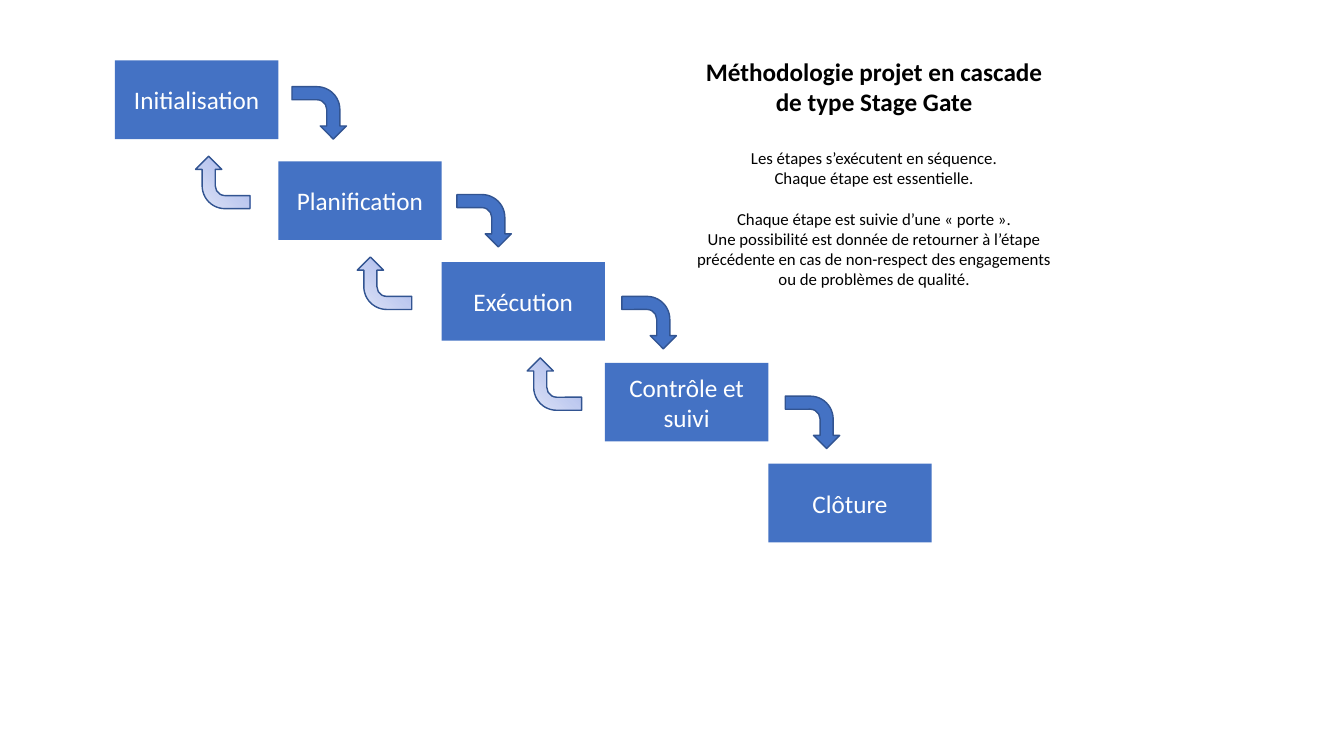
from copy import deepcopy
from dataclasses import dataclass

from pptx import Presentation
from pptx.dml.color import RGBColor
from pptx.enum.shapes import MSO_SHAPE
from pptx.enum.text import MSO_ANCHOR, MSO_AUTO_SIZE, PP_ALIGN
from pptx.util import Inches, Pt


@dataclass(frozen=True)
class Theme:
    font: str = "Calibri"
    heading_size: int = 18
    body_size: int = 12
    blue: str = "4472C4"
    outline: str = "325491"
    white: str = "FFFFFF"
    black: str = "000000"
    fade: tuple = ("96ABEA", "C0CBF0", "E0E5F7")


@dataclass(frozen=True)
class Stage:
    """Arrow offsets are shares of a grid cell, from the stage's corner."""
    label: str
    forward: tuple = None
    back: tuple = None


THEME = Theme()
COLUMN, ROW = 1.62, 1.0
STAGE_HEIGHT = 0.78
ARROW_WIDTH, ARROW_HEIGHT = 0.52, 0.54

STAGES = [
    Stage("Initialisation", (1.09, 0.25), (0.5, 0.94)),
    Stage("Planification", (1.1, 0.32), (0.49, 0.94)),
    Stage("Exécution", (1.11, 0.33), (0.53, 0.94)),
    Stage("Contrôle et suivi", (1.11, 0.32)),
    Stage("Clôture"),
]

TITLE = "Méthodologie projet en cascade de type Stage Gate"
# Each body line with the space above it, in points
BODY = [
    ("Les étapes s’exécutent en séquence.", 22),
    ("Chaque étape est essentielle.", 0),
    ("Chaque étape est suivie d’une « porte ».", 14.65),
    ("Une possibilité est donnée de retourner à l’étape précédente en cas de "
     "non-respect des engagements ou de problèmes de qualité.", 0),
]


def color(code):
    return RGBColor.from_string(code)


def style(para, size, code, bold=False):
    para.alignment = PP_ALIGN.CENTER
    para.font.name = THEME.font
    para.font.size = Pt(size)
    para.font.bold = bold
    para.font.color.rgb = color(code)


def add_shape(page, kind, left, top, width, height):
    shape = page.shapes.add_shape(
        kind, Inches(left), Inches(top), Inches(width), Inches(height))
    shape.shadow.inherit = False
    shape.fill.solid()
    shape.fill.fore_color.rgb = color(THEME.blue)
    return shape


def add_stage(page, label, left, top):
    box = add_shape(page, MSO_SHAPE.RECTANGLE, left, top, COLUMN, STAGE_HEIGHT)
    box.line.fill.background()
    frame = box.text_frame
    frame.word_wrap = True
    frame.vertical_anchor = MSO_ANCHOR.MIDDLE
    frame.text = label
    style(frame.paragraphs[0], THEME.heading_size, THEME.white)


def add_arrow(page, left, top, offset, rotation):
    across, down = offset
    arrow = add_shape(page, MSO_SHAPE.BENT_ARROW, left + across * COLUMN,
                      top + down * ROW, ARROW_WIDTH, ARROW_HEIGHT)
    arrow.rotation = rotation
    arrow.line.color.rgb = color(THEME.outline)
    arrow.line.width = Pt(1)
    return arrow


def fade_fill(fill):
    """Fill with the theme's three-colour diagonal gradient."""
    fill.gradient()
    fill.gradient_angle = 135
    first = fill.gradient_stops[0]._gs
    first.addnext(deepcopy(first))
    for index, (stop, code) in enumerate(zip(fill.gradient_stops, THEME.fade)):
        stop.position = index / 2
        stop.color.rgb = color(code)


def add_cascade(page, left, top):
    for index, stage in enumerate(STAGES):
        corner = left + index * COLUMN, top + index * ROW
        add_stage(page, stage.label, *corner)
        if stage.forward:
            add_arrow(page, *corner, stage.forward, 90)
        if stage.back:
            fade_fill(add_arrow(page, *corner, stage.back, 270).fill)


def add_description(page, left, top, width, height):
    box = page.shapes.add_textbox(
        Inches(left), Inches(top), Inches(width), Inches(height))
    frame = box.text_frame
    frame.word_wrap = True
    frame.auto_size = MSO_AUTO_SIZE.SHAPE_TO_FIT_TEXT
    frame.text = TITLE
    style(frame.paragraphs[0], THEME.heading_size, THEME.black, bold=True)
    for line, space in BODY:
        para = frame.add_paragraph()
        para.text = line
        para.space_before = Pt(space)
        style(para, THEME.body_size, THEME.black)


def main():
    deck = Presentation()
    deck.slide_width, deck.slide_height = Inches(13.33), Inches(7.5)
    page = deck.slides.add_slide(deck.slide_layouts[6])
    add_cascade(page, 1.14, 0.6)
    add_description(page, 6.76, 0.51, 3.82, 2.42)
    deck.save("out.pptx")


if __name__ == "__main__":
    main()
